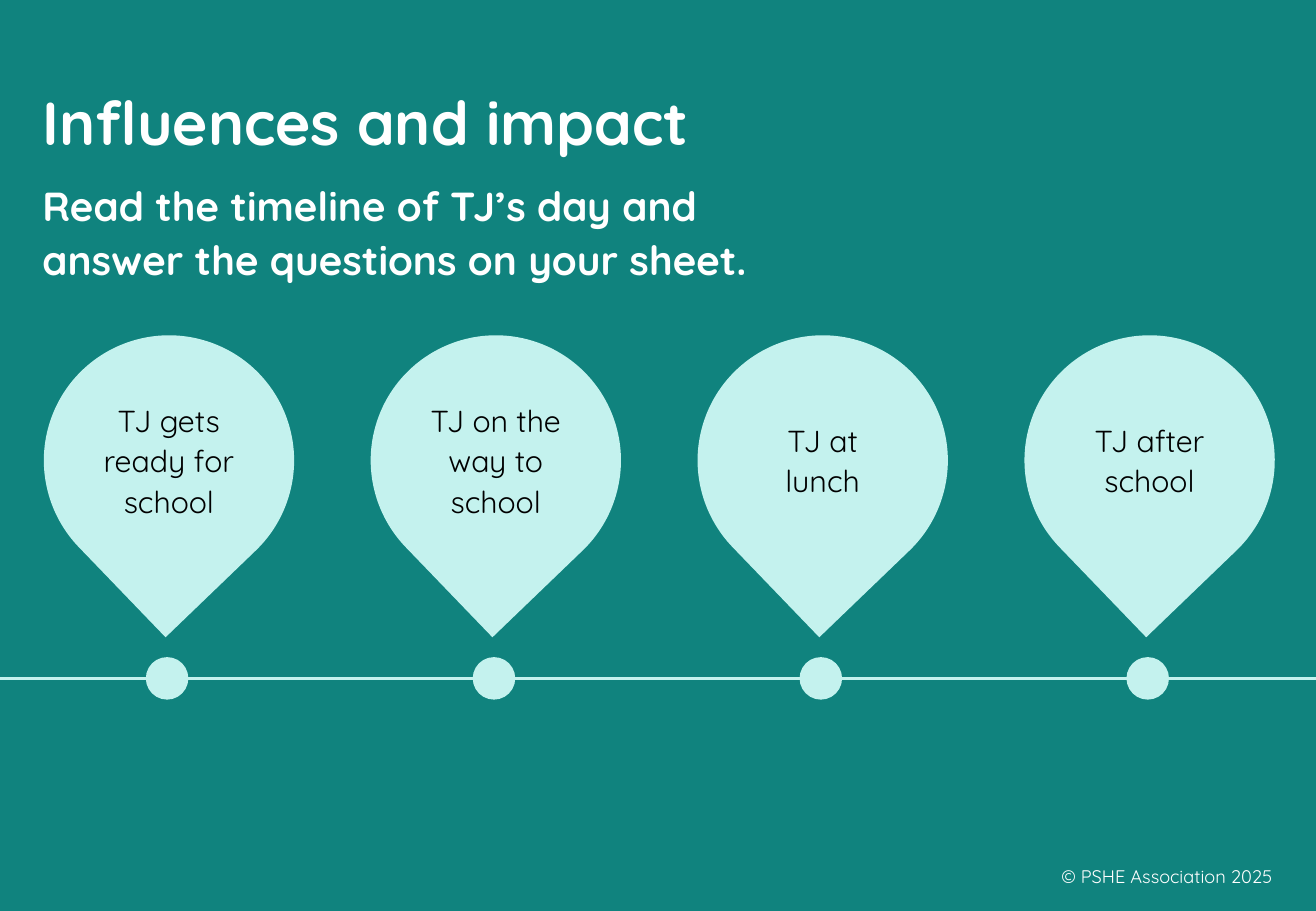
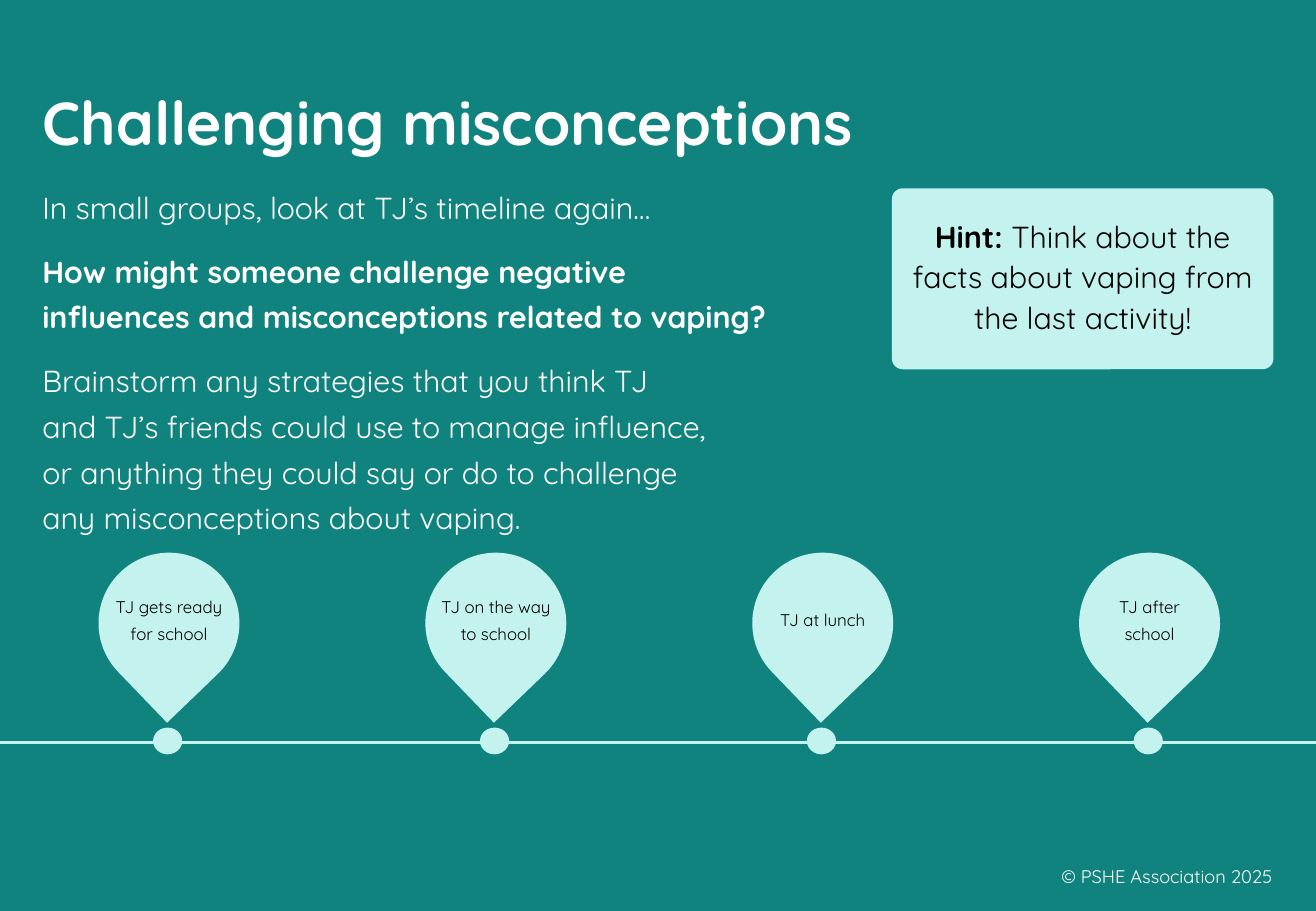
from dataclasses import dataclass
from typing import Any, NamedTuple

from lxml.etree import SubElement
from pptx import Presentation
from pptx.dml.color import RGBColor as Rgb
from pptx.enum.shapes import MSO_CONNECTOR as Link, MSO_SHAPE as Form
from pptx.enum.text import MSO_ANCHOR as Anchor, MSO_AUTO_SIZE as Auto, PP_ALIGN as Align
from pptx.oxml.ns import qn
from pptx.util import Pt

SCALE = 9144
WIDE, HIGH = 1083, 750
PITCH = 269
STAGES = ("TJ gets ready for school", "TJ on the way to school", "TJ at lunch", "TJ after school")


class Box(NamedTuple):
    left: int
    top: int
    wide: int
    high: int


class Span(NamedTuple):
    text: str
    bold: bool = False


class Style(NamedTuple):
    size: float
    color: Rgb
    lead: float | None = None
    gap: float = 0
    align: Align = Align.LEFT


@dataclass(frozen=True)
class Theme:
    font: str = "Quicksand"
    back: Rgb = Rgb(0x10, 0x83, 0x7E)
    mint: Rgb = Rgb(0xC4, 0xF2, 0xEE)
    rule: float = 1.75
    title: Style = Style(36, Rgb(255, 255, 255), 43)
    lead: Style = Style(24, Rgb(255, 255, 255), 32)
    body: Style = Style(18, Rgb(255, 255, 255), 27, 11)
    hint: Style = Style(18, Rgb(0, 0, 0), 24, 0, Align.CENTER)
    large: Style = Style(18, Rgb(0, 0, 0), 24, 0, Align.CENTER)
    small: Style = Style(10, Rgb(0, 0, 0), 16, 0, Align.CENTER)
    foot: Style = Style(10.8, Rgb(255, 255, 255), None, 0, Align.RIGHT)


@dataclass(frozen=True)
class Track:
    axis: int
    dot: Box
    pin: Box
    label: Box
    style: Style


THEME = Theme()


def px(num: int) -> int:
    return num * SCALE


def apply(item: Any, values: dict[str, Any]) -> None:
    for name, value in values.items():
        setattr(item, name, value)


def place(box: Box) -> tuple[int, ...]:
    return tuple(px(num) for num in box)


def shift(box: Box, step: int) -> Box:
    return box._replace(left=box.left + step * PITCH)


def write(shape: Any, paras: list[list[Span]], style: Style, anchor: Anchor = Anchor.TOP) -> None:
    frame = shape.text_frame
    apply(frame, {"word_wrap": True, "auto_size": Auto.NONE, "vertical_anchor": anchor})
    for index, spans in enumerate(paras):
        para = frame.add_paragraph() if index else frame.paragraphs[0]
        apply(para, {
            "alignment": style.align,
            "line_spacing": Pt(style.lead) if style.lead else None,
            "space_before": Pt(style.gap if index else 0),
        })
        for span in spans:
            for row, text in enumerate(span.text.split("\n")):
                if row:
                    para.add_line_break()
                run = para.add_run()
                run.text = text
                apply(run.font, {"name": THEME.font, "size": Pt(style.size), "bold": span.bold})
                run.font.color.rgb = style.color


def note(slide: Any, box: Box, paras: list[list[Span]], style: Style, anchor: Anchor = Anchor.TOP) -> None:
    write(slide.shapes.add_textbox(*place(box)), paras, style, anchor)


def draw(slide: Any, form: Form, box: Box, turn: float = 0) -> Any:
    shape = slide.shapes.add_shape(form, *place(box))
    shape.fill.solid()
    shape.fill.fore_color.rgb = THEME.mint
    shape.line.fill.background()
    shape.shadow.inherit = False
    shape.rotation = turn
    return shape


def start(deck: Any, title: str) -> Any:
    slide = deck.slides.add_slide(deck.slide_layouts[5])
    slide.background.fill.solid()
    slide.background.fill.fore_color.rgb = THEME.back
    head = slide.shapes.title
    apply(head, dict(zip(("left", "top", "width", "height"), place(Box(25, 59, 1030, 76)))))
    write(head, [[Span(title, True)]], THEME.title, Anchor.BOTTOM)
    note(slide, Box(813, 701, 244, 40), [[Span("© PSHE Association 2025")]], THEME.foot, Anchor.MIDDLE)
    return slide


def chart(slide: Any, track: Track) -> None:
    rule = slide.shapes.add_connector(Link.STRAIGHT, 0, px(track.axis), px(WIDE), px(track.axis))
    rule.line.color.rgb = THEME.mint
    rule.line.width = Pt(THEME.rule)
    SubElement(rule._element.spPr, qn("a:effectLst"))
    for step, stage in enumerate(STAGES):
        draw(slide, Form.OVAL, shift(track.dot, step))
        draw(slide, Form.TEAR, shift(track.pin, step), 136.1)
        note(slide, shift(track.label, step), [[Span(stage)]], track.style, Anchor.MIDDLE)


def impact(deck: Any) -> None:
    slide = start(deck, "Influences and impact")
    lead = "Read the timeline of TJ’s day and answer the questions on your sheet."
    note(slide, Box(25, 140, 645, 115), [[Span(lead, True)]], THEME.lead)
    chart(slide, Track(559, Box(120, 541, 35, 35), Box(36, 276, 206, 206),
                       Box(69, 320, 140, 115), THEME.large))


def beliefs(deck: Any) -> None:
    slide = start(deck, "Challenging misconceptions")
    note(slide, Box(25, 143, 693, 310), [
        [Span("In small groups, look at TJ’s timeline again…")],
        [Span("How might someone challenge negative \n"
              "influences and misconceptions related to vaping?", True)],
        [Span("Brainstorm any strategies that you think TJ \n"
              "and TJ’s friends could use to manage influence, \n"
              "or anything they could say or do to challenge \n"
              "any misconceptions about vaping.")],
    ], THEME.body)
    hint = draw(slide, Form.ROUNDED_RECTANGLE, Box(734, 155, 314, 149))
    hint.adjustments[0] = 0.06
    apply(hint.text_frame, {"margin_top": px(5), "margin_bottom": px(12)})
    write(hint, [[Span("Hint: ", True), Span("Think about the facts about vaping from the last activity!")]],
          THEME.hint, Anchor.MIDDLE)
    chart(slide, Track(611, Box(126, 599, 24, 22), Box(81, 455, 116, 116),
                       Box(83, 450, 112, 115), THEME.small))


def main() -> None:
    deck = Presentation()
    apply(deck, {"slide_width": px(WIDE), "slide_height": px(HIGH)})
    impact(deck)
    beliefs(deck)
    deck.save("out.pptx")


if __name__ == "__main__":
    main()
